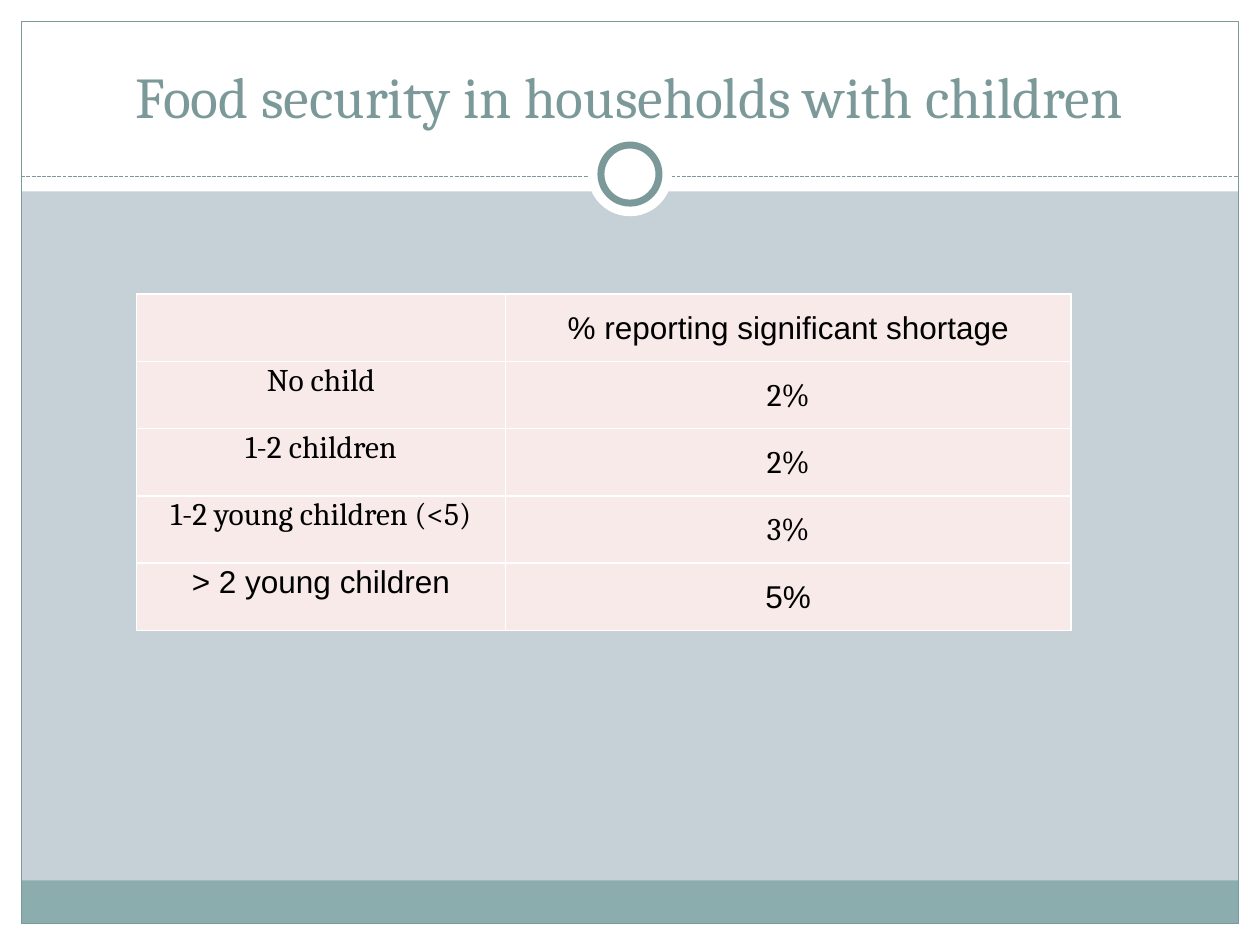
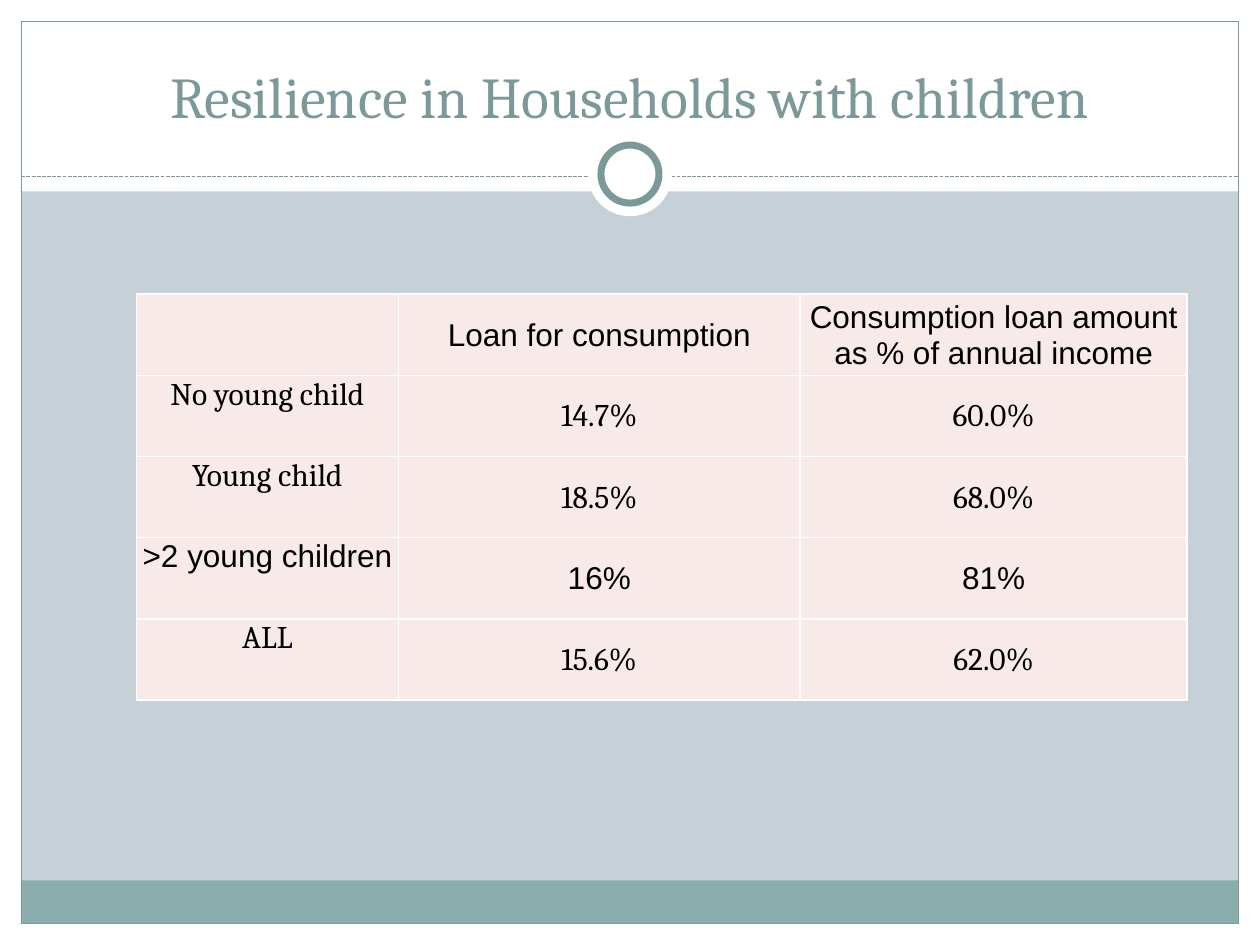
from lxml.etree import SubElement
from pptx import Presentation
from pptx.dml.color import RGBColor
from pptx.enum.dml import MSO_LINE
from pptx.enum.shapes import MSO_CONNECTOR, MSO_SHAPE
from pptx.enum.text import MSO_ANCHOR, MSO_AUTO_SIZE, PP_ALIGN
from pptx.oxml import parse_xml
from pptx.oxml.ns import nsdecls, qn
from pptx.util import Cm, Pt

BACKGROUND = RGBColor(0xC5, 0xD1, 0xD7)
WHITE = RGBColor(0xFF, 0xFF, 0xFF)
BLACK = RGBColor(0x00, 0x00, 0x00)
TEAL = RGBColor(0x7C, 0x99, 0x9A)
FOOTER_TEAL = RGBColor(0x8C, 0xAD, 0xAE)
CELL_PINK = RGBColor(0xF7, 0xEA, 0xE9)

SERIF, SANS = "Cambria", "Arial"
SLIDE_WIDTH, SLIDE_HEIGHT = 25.4, 19.05
MARGIN = 0.43
TITLE_BOX = (0.84, 0.64, 23.7, 2.11)

# Each table row is its font followed by its cell texts.
FOOD_SECURITY = [
    (SANS, "", "% reporting significant shortage"),
    (SERIF, "No child", "2%"),
    (SERIF, "1-2 children", "2%"),
    (SERIF, "1-2 young children (<5)", "3%"),
    (SANS, "> 2 young children", "5%"),
]
RESILIENCE = [
    (SANS, "", "Loan for consumption", "Consumption loan amount as % of annual income"),
    (SERIF, "No young child", "14.7%", "60.0%"),
    (SERIF, "Young child", "18.5%", "68.0%"),
    (SANS, ">2 young children", "16%", "81%"),
    (SERIF, "ALL", "15.6%", "62.0%"),
]


def write_text(frame, text, font=SERIF, size=18, color=BLACK):
    frame.word_wrap = True
    paragraph = frame.paragraphs[0]
    paragraph.alignment = PP_ALIGN.CENTER
    run = paragraph.add_run()
    run.text = text
    run.font.name, run.font.size, run.font.bold = font, Pt(size), False
    run.font.color.rgb = color


def add_figure(slide, kind, box, fill=None, line_width=None):
    figure = slide.shapes.add_shape(kind, *map(Cm, box))
    figure.shadow.inherit = False
    if fill is None:
        figure.fill.background()
    else:
        figure.fill.solid()
        figure.fill.fore_color.rgb = fill
    if line_width is None:
        figure.line.fill.background()
    else:
        figure.line.color.rgb = TEAL
        figure.line.width = Pt(line_width)


def add_dashed_rule(slide, left, y, width):
    rule = slide.shapes.add_connector(
        MSO_CONNECTOR.STRAIGHT, Cm(left), Cm(y), Cm(left + width), Cm(y))
    rule.line.color.rgb = TEAL
    rule.line.width = Pt(0.75)
    rule.line.dash_style = MSO_LINE.SQUARE_DOT
    SubElement(rule.element.spPr, qn("a:effectLst"))


def draw_frame(slide, width, height):
    """Draw the margins, title band, footer band, outline and ring."""
    inner_width, inner_height = width - 2 * MARGIN, height - 2 * MARGIN
    footer_height = 0.87
    bottom = height - MARGIN
    for box, fill in [
        ((0, bottom, width, MARGIN), WHITE),
        ((0, 0, width, 3.86), WHITE),
        ((0, 0, MARGIN, height), WHITE),
        ((width - MARGIN, 0, MARGIN, height), WHITE),
        ((MARGIN, bottom - footer_height, inner_width, footer_height), FOOTER_TEAL),
    ]:
        add_figure(slide, MSO_SHAPE.RECTANGLE, box, fill)
    add_figure(slide, MSO_SHAPE.RECTANGLE,
               (MARGIN, MARGIN, inner_width, inner_height), line_width=0.75)
    add_dashed_rule(slide, MARGIN, 3.56, inner_width)
    for diameter, line_width in [(1.7, None), (1.17, 4)]:
        box = (width / 2 - diameter / 2, 3.51 - diameter / 2, diameter, diameter)
        add_figure(slide, MSO_SHAPE.OVAL, box, WHITE, line_width)


def move_frame_to_layout(slide, layout):
    """Hand the frame drawn on a slide to its layout, behind the title."""
    title, *unused = layout.placeholders
    for placeholder in unused:
        placeholder.element.getparent().remove(placeholder.element)
    for part in list(slide.shapes):
        if not part.is_placeholder:
            title.element.addprevious(part.element)


def add_title(slide, text, box):
    title = slide.shapes.title
    title.left, title.top, title.width, title.height = map(Cm, box)
    title.text_frame.auto_size = MSO_AUTO_SIZE.NONE
    title.text_frame.vertical_anchor = MSO_ANCHOR.BOTTOM
    write_text(title.text_frame, text, size=33, color=TEAL)


def format_cell(cell, anchor):
    cell.margin_left = cell.margin_right = cell.margin_top = Cm(0.03)
    cell.margin_bottom = 0
    cell.vertical_anchor = anchor
    properties = cell._tc.get_or_add_tcPr()
    for side in "LRTB":
        properties.append(parse_xml(
            f'<a:ln{side} {nsdecls("a")} w="{Pt(1)}"><a:solidFill>'
            f'<a:srgbClr val="{WHITE}"/></a:solidFill></a:ln{side}>'))
    cell.fill.solid()
    cell.fill.fore_color.rgb = CELL_PINK


def add_data_table(slide, rows, left, top, column_widths, height):
    table = slide.shapes.add_table(
        len(rows), len(column_widths), Cm(left), Cm(top),
        Cm(sum(column_widths)), Cm(height)).table
    table.first_row = table.horz_banding = False
    for column, width in zip(table.columns, column_widths):
        column.width = Cm(width)
    for row_index, (font, *texts) in enumerate(rows):
        table.rows[row_index].height = Cm(height / len(rows))
        for column_index, text in enumerate(texts):
            cell = table.cell(row_index, column_index)
            format_cell(cell, MSO_ANCHOR.MIDDLE if column_index else MSO_ANCHOR.TOP)
            if text:
                write_text(cell.text_frame, text, font=font)


def add_table_slide(deck, layout, title, rows, column_widths, height):
    slide = deck.slides.add_slide(layout)
    add_title(slide, title, TITLE_BOX)
    add_data_table(slide, rows, 2.75, 5.93, column_widths, height)
    return slide


def main():
    deck = Presentation()
    deck.slide_width, deck.slide_height = Cm(SLIDE_WIDTH), Cm(SLIDE_HEIGHT)
    layout = deck.slide_layouts.get_by_name("Title Only")
    layout.background.fill.solid()
    layout.background.fill.fore_color.rgb = BACKGROUND

    first = deck.slides.add_slide(layout)
    draw_frame(first, SLIDE_WIDTH, SLIDE_HEIGHT)
    move_frame_to_layout(first, layout)
    add_title(first, "Food security in households with children", TITLE_BOX)
    add_data_table(first, FOOD_SECURITY, 2.75, 5.93, (7.44, 11.4), 6.78)

    add_table_slide(deck, layout, "Resilience in Households with children",
                    RESILIENCE, (5.28, 8.1, 7.8), 8.18)
    deck.save("out.pptx")


if __name__ == "__main__":
    main()
